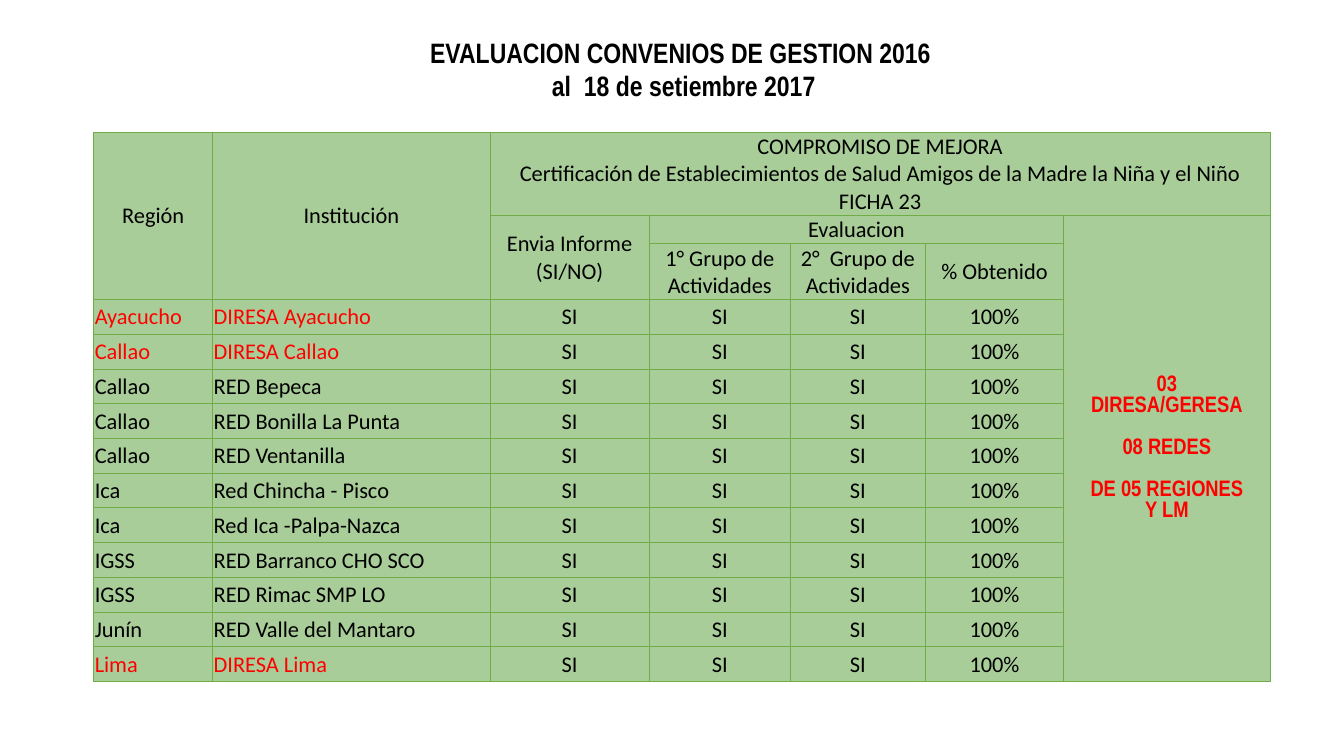
from lxml.etree import SubElement
from pptx import Presentation
from pptx.dml.color import RGBColor
from pptx.enum.text import MSO_ANCHOR, PP_ALIGN
from pptx.oxml.ns import qn
from pptx.util import Inches, Pt

COLORS = {"text": "000000", "accent": "FF0000", "cell": "A9CD99", "border": "70AD47"}
HEADING_FONT, BODY_FONT = "Arial Narrow", "Calibri"

TITLE = ["EVALUACION CONVENIOS DE GESTION 2016", " al  18 de setiembre 2017"]
COLUMN_WIDTHS = [1.18, 2.75, 1.58, 1.4, 1.34, 1.37, 2.05]
HEADER_HEIGHTS = [0.82, 0.27, 0.54]
# (row, column, row span, column span, lines)
HEADERS = [
    (0, 0, 3, 1, ["Región"]),
    (0, 1, 3, 1, ["Institución"]),
    (0, 2, 1, 5, [
        "COMPROMISO DE MEJORA",
        "Certificación de Establecimientos de Salud Amigos de la Madre la Niña y el Niño",
        "FICHA 23",
    ]),
    (1, 2, 2, 1, ["Envia Informe", "(SI/NO)"]),
    (1, 3, 1, 3, ["Evaluacion"]),
    (2, 3, 1, 1, ["1° Grupo de Actividades"]),
    (2, 4, 1, 1, ["2°  Grupo de Actividades"]),
    (2, 5, 1, 1, ["% Obtenido"]),
]
INSTITUTIONS = [
    ("Ayacucho", "DIRESA Ayacucho"),
    ("Callao", "DIRESA Callao"),
    ("Callao", "RED Bepeca"),
    ("Callao", "RED Bonilla La Punta"),
    ("Callao", "RED Ventanilla"),
    ("Ica", "Red Chincha - Pisco"),
    ("Ica", "Red Ica -Palpa-Nazca"),
    ("IGSS", "RED Barranco CHO SCO"),
    ("IGSS", "RED Rimac SMP LO"),
    ("Junín", "RED Valle del Mantaro"),
    ("Lima", "DIRESA Lima"),
]
RESULTS = ["SI", "SI", "SI", "100%"]
SUMMARY = [["03", "DIRESA/GERESA"], ["08 REDES"], ["DE 05 REGIONES", "Y LM"]]


def rgb(name):
    return RGBColor.from_string(COLORS[name])


def add_text(paragraph, text, size=16, font=BODY_FONT, color="text", bold=False):
    run = paragraph.add_run()
    run.text = text
    run.font.size = Pt(size)
    run.font.name = font
    run.font.bold = bold
    run.font.color.rgb = rgb(color)


def write_lines(cell, lines, color="text", align=PP_ALIGN.CENTER):
    """Write lines as one paragraph with line breaks."""
    paragraph = cell.text_frame.paragraphs[0]
    paragraph.alignment = align
    for number, line in enumerate(lines):
        if number:
            paragraph.add_line_break()
        add_text(paragraph, line, color=color)


def style_cell(cell):
    cell.vertical_anchor = MSO_ANCHOR.MIDDLE
    cell.margin_left = cell.margin_top = cell.margin_right = Inches(0.01)
    cell.margin_bottom = 0
    properties = cell._tc.get_or_add_tcPr()
    for side in ("lnL", "lnR", "lnT", "lnB"):
        border = SubElement(properties, qn(f"a:{side}"), w=str(Pt(0.5)))
        fill = SubElement(border, qn("a:solidFill"))
        SubElement(fill, qn("a:srgbClr"), val=COLORS["border"])
    cell.fill.solid()
    cell.fill.fore_color.rgb = rgb("cell")


def add_title(slide, left, top, width, height):
    frame = slide.shapes.add_textbox(
        Inches(left), Inches(top), Inches(width), Inches(height)).text_frame
    frame.word_wrap = True
    for number, line in enumerate(TITLE):
        paragraph = frame.add_paragraph() if number else frame.paragraphs[0]
        paragraph.alignment = PP_ALIGN.CENTER
        add_text(paragraph, line, 20, HEADING_FONT, bold=True)


def write_summary(cell):
    """Write the groups of lines, set apart by paragraph spacing."""
    paragraph = cell.text_frame.paragraphs[0]
    for group_number, group in enumerate(SUMMARY):
        for line_number, line in enumerate(group):
            if group_number or line_number:
                paragraph = cell.text_frame.add_paragraph()
            paragraph.alignment = PP_ALIGN.CENTER
            paragraph.line_spacing = 1.0
            paragraph.space_before = Pt(15 if group_number and not line_number else 0)
            add_text(paragraph, line, font=HEADING_FONT, color="accent", bold=True)


def add_evaluation_table(slide, left, top, width, height):
    first_body_row = len(HEADER_HEIGHTS)
    row_count = first_body_row + len(INSTITUTIONS)
    table = slide.shapes.add_table(
        row_count, len(COLUMN_WIDTHS),
        Inches(left), Inches(top), Inches(width), Inches(height)).table
    table.first_row = table.horz_banding = False
    for column, share in zip(table.columns, COLUMN_WIDTHS):
        column.width = Inches(width * share / sum(COLUMN_WIDTHS))
    body_height = (height - sum(HEADER_HEIGHTS)) / len(INSTITUTIONS)
    row_heights = HEADER_HEIGHTS + [body_height] * len(INSTITUTIONS)
    for row, row_height in zip(table.rows, row_heights):
        row.height = Inches(row_height)
    for cell in table.iter_cells():
        style_cell(cell)

    for row, column, row_span, column_span, lines in HEADERS:
        cell = table.cell(row, column)
        if row_span * column_span > 1:
            cell.merge(table.cell(row + row_span - 1, column + column_span - 1))
        write_lines(cell, lines)

    for row, (region, institution) in enumerate(INSTITUTIONS, first_body_row):
        color = "accent" if institution.startswith("DIRESA") else "text"
        for column, label in enumerate((region, institution)):
            write_lines(table.cell(row, column), [label], color, PP_ALIGN.LEFT)
        for column, result in enumerate(RESULTS, 2):
            write_lines(table.cell(row, column), [result])

    summary = table.cell(1, 6)
    summary.merge(table.cell(row_count - 1, 6))
    write_summary(summary)


def main():
    presentation = Presentation()
    presentation.slide_width = Inches(13.33)
    presentation.slide_height = Inches(7.5)
    slide = presentation.slides.add_slide(presentation.slide_layouts[6])
    add_evaluation_table(slide, 0.93, 1.31, 11.67, 5.42)
    add_title(slide, 2.73, 0.3, 8.04, 0.77)
    presentation.save("out.pptx")


if __name__ == "__main__":
    main()
